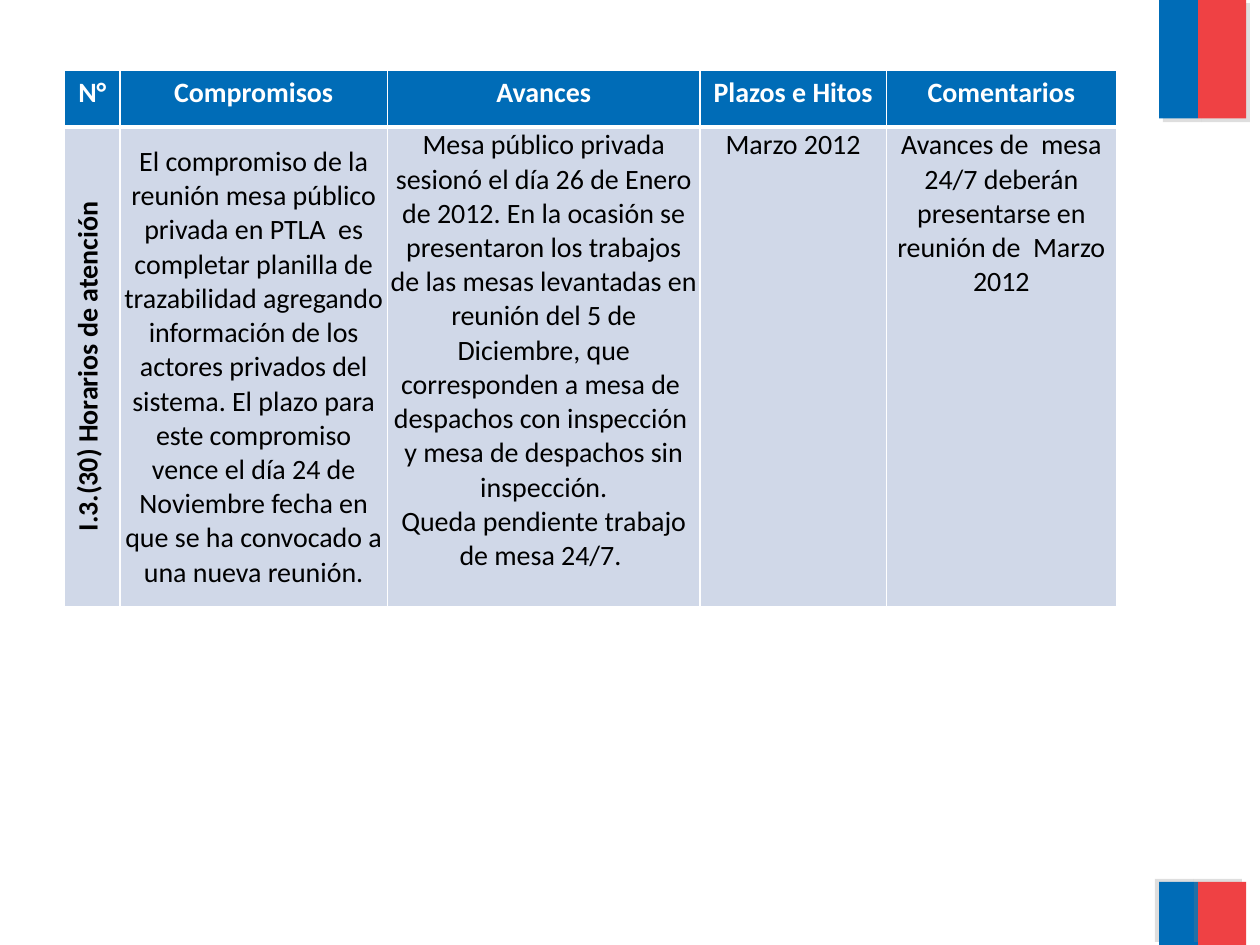
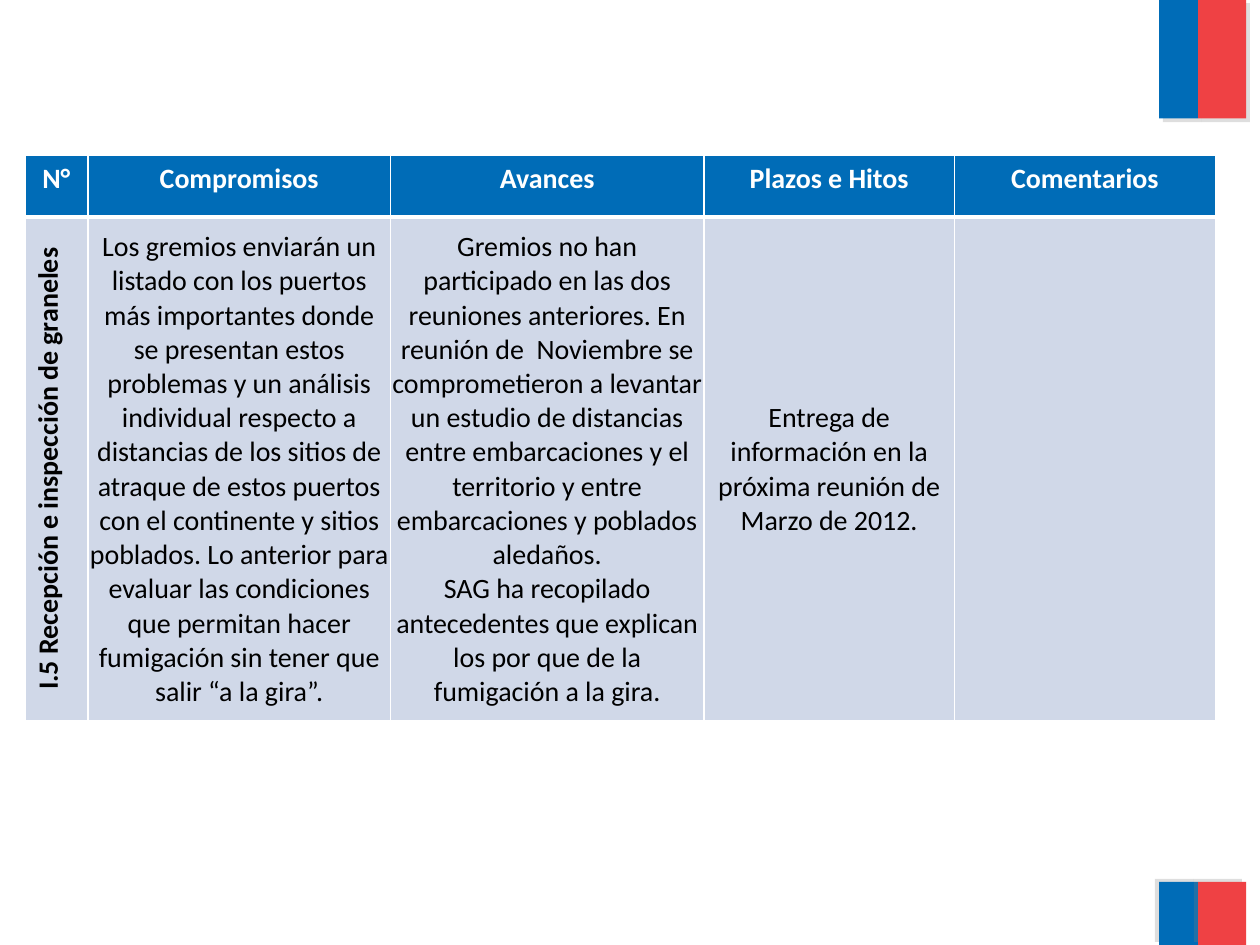
from lxml import etree
from pptx import Presentation
from pptx.dml.color import RGBColor
from pptx.enum import shapes, text
from pptx.oxml import ns
from pptx.util import Pt

BLUE = RGBColor(0x00, 0x6C, 0xB7)
RED = RGBColor(0xEF, 0x41, 0x44)
PALE = RGBColor(0xD0, 0xD8, 0xE8)
GREY = RGBColor(0x80, 0x80, 0x80)
WHITE = RGBColor(0xFF, 0xFF, 0xFF)
BLACK = RGBColor(0x00, 0x00, 0x00)

FONT = "Calibri"
SIZE = 16
TOP, MID = text.MSO_ANCHOR.TOP, text.MSO_ANCHOR.MIDDLE
HEADS = ["N°", "Compromisos", "Avances", "Plazos e Hitos", "Comentarios"]


def add_node(root, tag, **attrs):
    node = etree.SubElement(root, ns.qn(tag))
    for key, val in attrs.items():
        node.set(key, str(val))
    return node


# Colour bands shared by the slides
def add_shade(shape, angle):
    effects = add_node(shape._element.spPr, "a:effectLst")
    shade = add_node(effects, "a:outerShdw", blurRad=0, dist=Pt(3),
                     dir=angle * 60000, algn="ctr", rotWithShape=0)
    color = add_node(shade, "a:srgbClr", val=GREY)
    add_node(color, "a:alpha", val=25000)


def add_band(slide, left, top, width, height, color, angle):
    band = slide.shapes.add_shape(shapes.MSO_SHAPE.RECTANGLE,
                                  Pt(left), Pt(top), Pt(width), Pt(height))
    band.fill.solid()
    band.fill.fore_color.rgb = color
    band.line.fill.background()
    add_shade(band, angle)


def add_flags(slide):
    for top, height, angle in [(-0.3, 68, 45), (504, 36, 215)]:
        for left, width, color in [(662.4, 22.3, BLUE), (684.7, 27.4, RED)]:
            add_band(slide, left, top, width, height, color, angle)


# Table parts
def set_edges(cell, base):
    props = cell._tc.get_or_add_tcPr()
    for side, width in [("L", 1), ("R", 1), ("T", 1), ("B", base)]:
        line = add_node(props, "a:ln" + side, w=Pt(width))
        add_node(add_node(line, "a:solidFill"), "a:srgbClr", val=WHITE)


def set_cell(cell, paras, fill, color, bold=False, base=1):
    set_edges(cell, base)
    cell.fill.solid()
    cell.fill.fore_color.rgb = fill
    frame = cell.text_frame
    for i, words in enumerate(paras):
        para = frame.add_paragraph() if i else frame.paragraphs[0]
        para.alignment = text.PP_ALIGN.CENTER
        run = para.add_run()
        run.text = words
        run.font.name = FONT
        run.font.size = Pt(SIZE)
        run.font.bold = bold
        run.font.color.rgb = color


def set_body(cell, paras, anchor):
    cell.margin_left = cell.margin_right = cell.margin_top = Pt(0.72)
    cell.margin_bottom = 0
    cell.vertical_anchor = anchor
    set_cell(cell, paras, PALE, BLACK)


def add_grid(slide, left, top, widths, heights, label, body):
    frame = slide.shapes.add_table(2, len(HEADS), Pt(left), Pt(top),
                                   Pt(sum(widths)), Pt(sum(heights)))
    table = frame.table
    for col, width in zip(table.columns, widths):
        col.width = Pt(width)
    for row, height in zip(table.rows, heights):
        row.height = Pt(height)
    for i, head in enumerate(HEADS):
        set_cell(table.cell(0, i), [head], BLUE, WHITE, bold=True, base=3)
    side = table.cell(1, 0)
    set_cell(side, [label], PALE, BLACK, bold=True)
    side._tc.get_or_add_tcPr().set("vert", "vert270")
    for i, (anchor, paras) in enumerate(body, 1):
        set_body(table.cell(1, i), paras, anchor)


def add_page(deck, *grid):
    slide = deck.slides.add_slide(deck.slide_layouts[6])
    add_flags(slide)
    add_grid(slide, *grid)


def main():
    deck = Presentation()
    deck.slide_width, deck.slide_height = Pt(720), Pt(540)

    # Opening hours
    add_page(deck, 37, 40, [31.5, 153, 178.5, 106.5, 131.5], [32.5, 274],
             "I.3.(30) Horarios de atención", [
        (MID, ["El compromiso de la reunión mesa público privada en PTLA  es "
               "completar planilla de trazabilidad agregando información de "
               "los actores privados del sistema. El plazo para este "
               "compromiso vence el día 24 de Noviembre fecha en que se ha "
               "convocado a una nueva reunión."]),
        (TOP, ["Mesa público privada sesionó el día 26 de Enero de 2012. En "
               "la ocasión se presentaron los trabajos de las mesas "
               "levantadas en reunión del 5 de Diciembre, que corresponden "
               "a mesa de  despachos con inspección  y mesa de despachos "
               "sin inspección.",
               "Queda pendiente trabajo de mesa 24/7. "]),
        (TOP, ["Marzo 2012"]),
        (TOP, ["Avances de  mesa 24/7 deberán presentarse en reunión de  "
               "Marzo 2012"]),
    ])

    # Bulk cargo
    add_page(deck, 14.2, 88.6, [36, 173, 179, 143.3, 149], [35.3, 288],
             "I.5 Recepción e inspección de graneles", [
        (MID, ["Los gremios enviarán un listado con los puertos más "
               "importantes donde se presentan estos problemas y un "
               "análisis individual respecto a distancias de los sitios de "
               "atraque de estos puertos con el continente y sitios "
               "poblados. Lo anterior para evaluar las condiciones que "
               "permitan hacer fumigación sin tener que salir “a la gira”."]),
        (MID, ["Gremios no han participado en las dos reuniones anteriores. "
               "En reunión de  Noviembre se comprometieron a levantar un "
               "estudio de distancias entre embarcaciones y el territorio y "
               "entre embarcaciones y poblados aledaños.",
               "SAG ha recopilado antecedentes que explican los por que de "
               "la fumigación a la gira."]),
        (MID, ["Entrega de información en la próxima reunión de Marzo de "
               "2012."]),
        (MID, []),
    ])
    deck.save("out.pptx")


if __name__ == "__main__":
    main()
